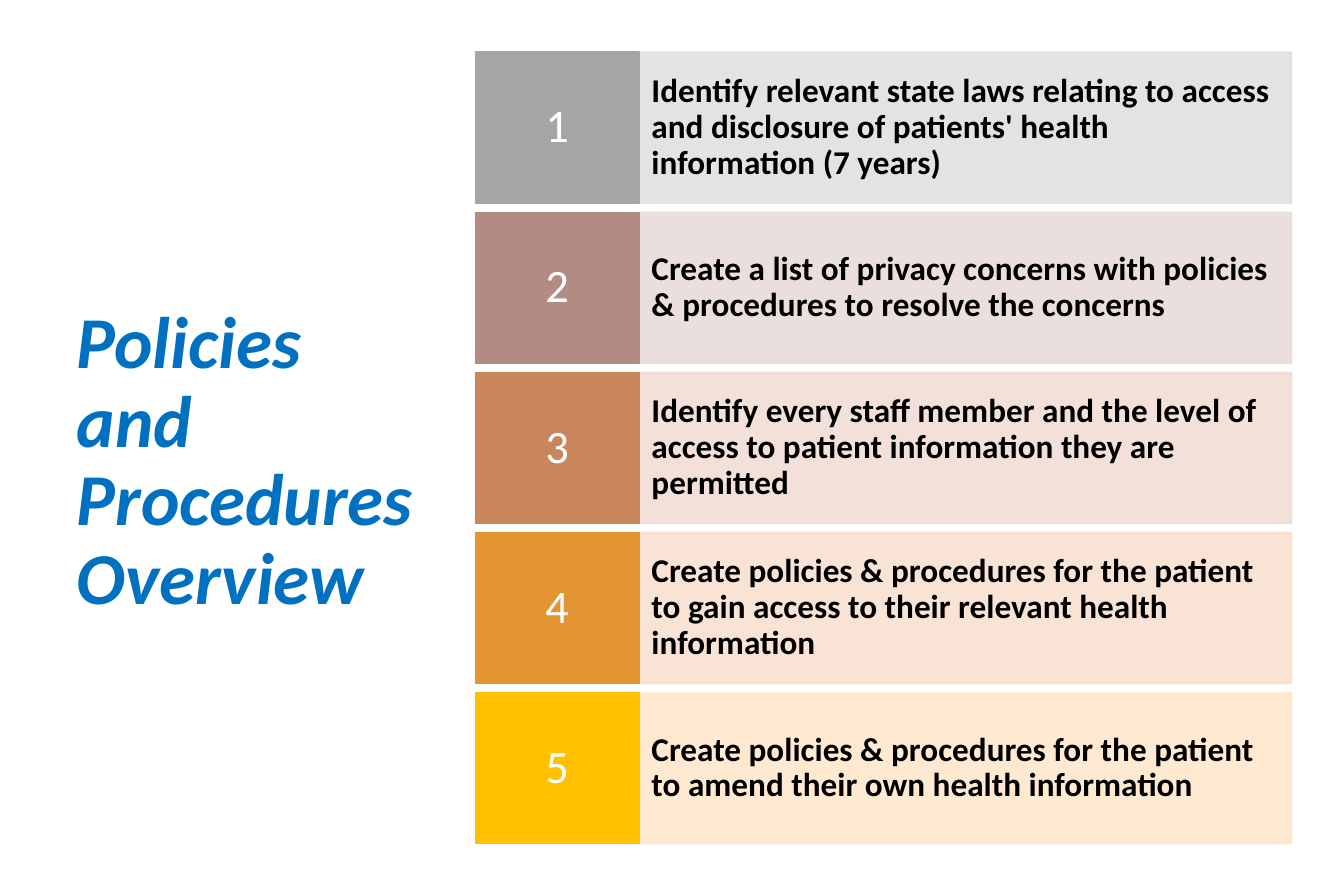
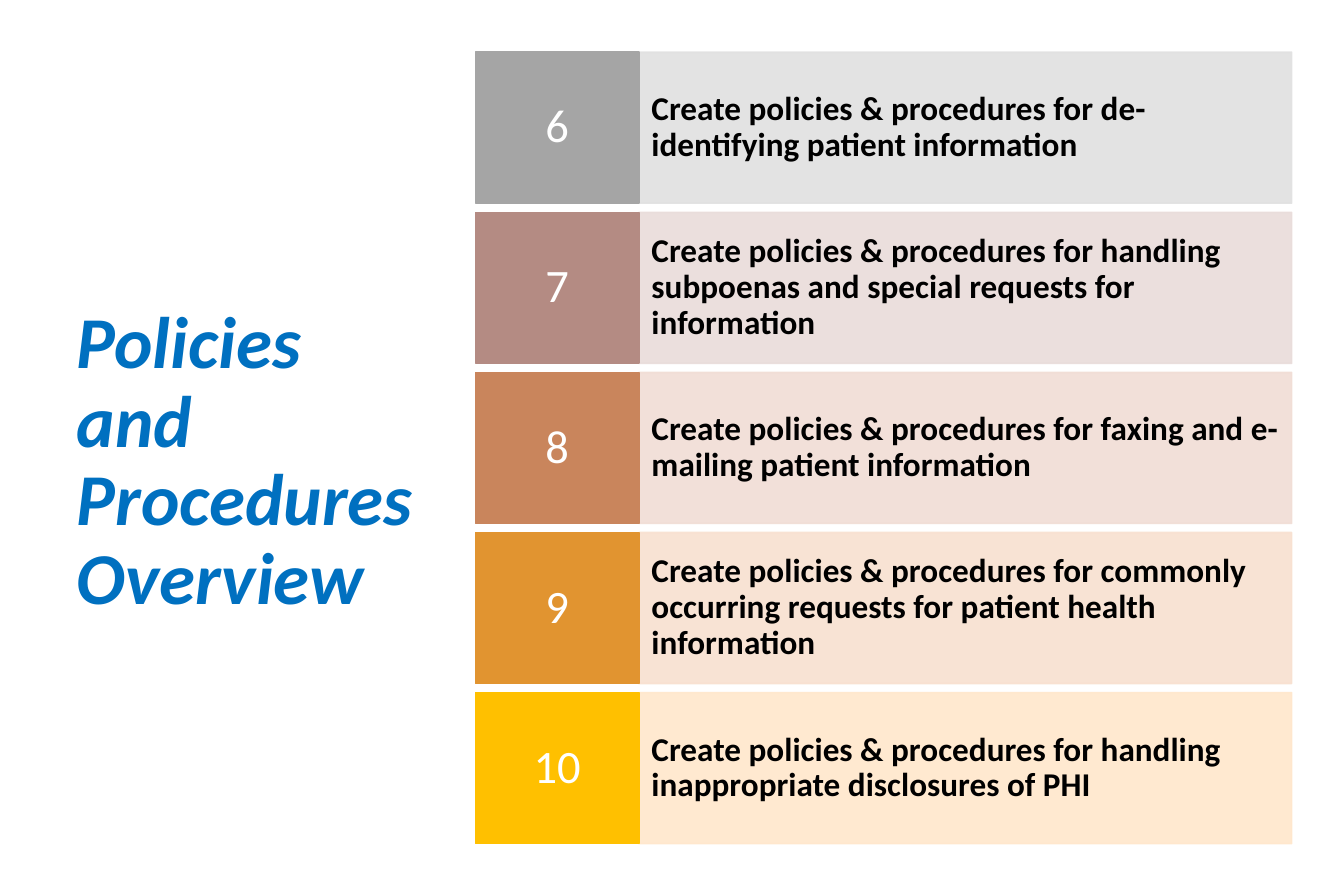
from dataclasses import dataclass

from lxml.etree import SubElement
from pptx import Presentation
from pptx.dml.color import RGBColor
from pptx.enum.shapes import MSO_SHAPE
from pptx.enum.text import MSO_ANCHOR, MSO_AUTO_SIZE, PP_ALIGN
from pptx.oxml.ns import qn
from pptx.util import Pt


@dataclass(frozen=True)
class Theme:
    font: str = "Calibri"
    title: str = "0070C0"
    text: str = "000000"
    badge_text: str = "FFFFFF"
    title_size: int = 44
    text_size: int = 20
    badge_size: int = 28
    line_spacing: float = 0.9
    tint_opacity: int = 90
    # (badge, tint) for each row, from top to bottom
    rows: tuple = (
        ("A5A5A5", "E1E1E1"),
        ("B48B83", "E9DCDA"),
        ("C9855C", "F1DDD5"),
        ("E19430", "F8E0D0"),
        ("FFC000", "FFE7CB"),
    )


THEME = Theme()
TITLE = "Policies and Procedures Overview"
TITLE_BOX = (39, 66, 222, 426)
LIST_BOX = (286.5, 31.5, 492, 477)
BADGE_WIDTH = 98.5
ROW_GAP = 5.5

SLIDES = (
    (
        "Identify relevant state laws relating to access and disclosure of patients' health information (7 years)",
        "Create a list of privacy concerns with policies & procedures to resolve the concerns",
        "Identify every staff member and the level of access to patient information they are permitted",
        "Create policies & procedures for the patient to gain access to their relevant health information",
        "Create policies & procedures for the patient to amend their own health information",
    ),
    (
        "Create policies & procedures for de-identifying patient information",
        "Create policies & procedures for handling subpoenas and special requests for information",
        "Create policies & procedures for faxing and e-mailing patient information",
        "Create policies & procedures for commonly occurring requests for patient health information",
        "Create policies & procedures for handling inappropriate disclosures of PHI",
    ),
)


def set_attrs(obj, values):
    for name, value in values.items():
        setattr(obj, name, value)


def write(sp, text, size, color, align, inset, **font):
    tf = sp.text_frame
    set_attrs(tf, {
        "text": text,
        "word_wrap": True,
        "auto_size": MSO_AUTO_SIZE.NONE,
        "vertical_anchor": MSO_ANCHOR.MIDDLE,
        "margin_left": Pt(inset),
        "margin_right": Pt(inset),
    })
    p = tf.paragraphs[0]
    set_attrs(p, {"alignment": align, "line_spacing": THEME.line_spacing})
    r = p.runs[0]
    set_attrs(r.font, {"name": THEME.font, "size": Pt(size), **font})
    r.font.color.rgb = RGBColor.from_string(color)


def add_panel(slide, box, color, opacity=100):
    """Add a rectangle whose fill and outline share one colour and opacity."""
    sp = slide.shapes.add_shape(MSO_SHAPE.RECTANGLE, *map(Pt, box))
    sp.shadow.inherit = False
    sp.line.width = Pt(1)
    for fill in (sp.fill, sp.line.fill):
        fill.solid()
        fill.fore_color.rgb = RGBColor.from_string(color)
    if opacity < 100:
        for clr in sp.element.spPr.iter(qn("a:srgbClr")):
            SubElement(clr, qn("a:alpha"), val=str(opacity * 1000))
    return sp


def place_title(slide, box):
    sp = slide.shapes.title
    set_attrs(sp, dict(zip(("left", "top", "width", "height"), map(Pt, box))))
    write(sp, TITLE, THEME.title_size, THEME.title, PP_ALIGN.LEFT, 7.2, bold=True, italic=True)


def add_row(slide, box, number, text, colors):
    left, top, width, height = box
    badge_color, tint = colors
    body = add_panel(slide, (left + BADGE_WIDTH, top, width - BADGE_WIDTH, height),
                     tint, THEME.tint_opacity)
    write(body, text, THEME.text_size, THEME.text, PP_ALIGN.LEFT, 7.65, bold=True)
    badge = add_panel(slide, (left, top, BADGE_WIDTH, height), badge_color)
    write(badge, str(number), THEME.badge_size, THEME.badge_text, PP_ALIGN.CENTER, 5.2)


def add_numbered_list(slide, box, items, first):
    left, top, width, height = box
    pitch = (height + ROW_GAP) / len(items)
    for i, (text, colors) in enumerate(zip(items, THEME.rows)):
        row_box = (left, top + i * pitch, width, pitch - ROW_GAP)
        add_row(slide, row_box, first + i, text, colors)


def add_overview_slide(prs, items, first):
    slide = prs.slides.add_slide(prs.slide_layouts.get_by_name("Title Only"))
    place_title(slide, TITLE_BOX)
    add_numbered_list(slide, LIST_BOX, items, first)


def main():
    prs = Presentation()
    set_attrs(prs, {"slide_width": Pt(810), "slide_height": Pt(540)})
    first = 1
    for items in SLIDES:
        add_overview_slide(prs, items, first)
        first += len(items)
    prs.save("out.pptx")


if __name__ == "__main__":
    main()
